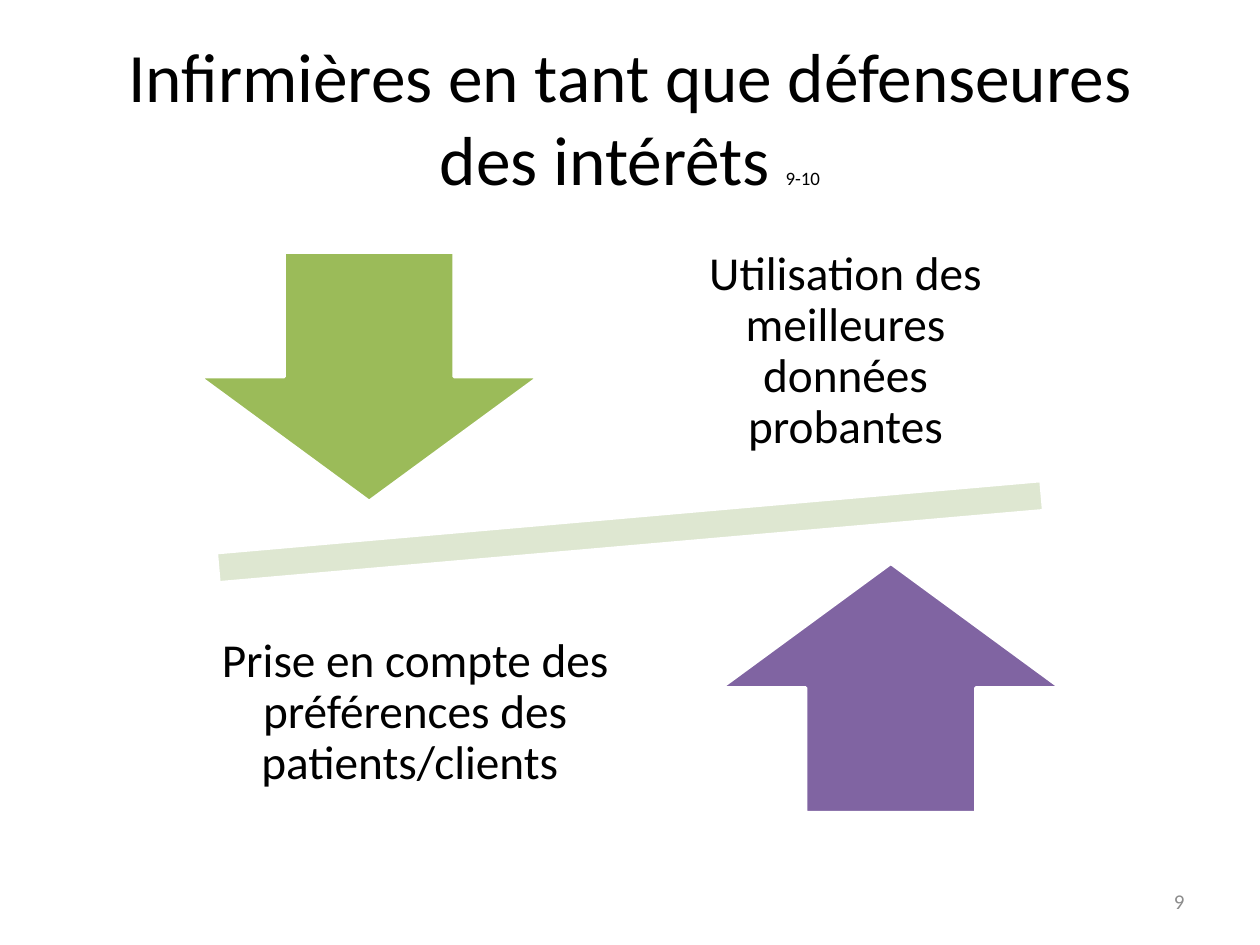
from pptx import Presentation
from pptx.dml.color import RGBColor
from pptx.enum.shapes import MSO_SHAPE as SHAPE
from pptx.enum.text import MSO_ANCHOR as ANCHOR, MSO_AUTO_SIZE as AUTO, PP_ALIGN as ALIGN
from pptx.util import Inches, Pt

# Content: boxes are left, top, width, height in inches
TITLE = [("Infirmières en tant que défenseures des intérêts ", 39.6), ("9-10", 10.8)]
TITLE_BOX = (0.5, 0.3, 9, 1.25)
BALANCE = [  # preset, box, fill, rotation
    (SHAPE.MATH_MINUS, (0.53, 3.71, 8.94, 1.02), "DEE7D1", 355),
    (SHAPE.DOWN_ARROW, (1.58, 2, 2.7, 1.98), "9BBB59", 0),
    (SHAPE.UP_ARROW, (5.72, 4.47, 2.7, 1.98), "8064A2", 0),
]
LABELS = [
    ("Utilisation des meilleures données probantes", (5.27, 1.75, 2.88, 2.08)),
    ("Prise en compte des préférences des patients/clients ", (1.46, 4.62, 3.67, 2.08)),
]
NUMBER, NUMBER_BOX = "9", (7.17, 6.95, 2.33, 0.4)


def rgb(value):
    return RGBColor.from_string(value)


def inches(box):
    return [Inches(v) for v in box]


def style(r, size, color="000000"):
    r.font.name = "Calibri"
    r.font.size = Pt(size)
    r.font.color.rgb = rgb(color)


def add_text(s, text, box, size, color, align):
    tf = s.shapes.add_textbox(*inches(box)).text_frame
    tf.word_wrap = True
    tf.vertical_anchor = ANCHOR.MIDDLE
    tf.text = text
    p = tf.paragraphs[0]
    p.alignment = align
    style(p.runs[0], size, color)
    return tf


prs = Presentation()
prs.slide_width, prs.slide_height = Inches(10), Inches(7.5)
s = prs.slides.add_slide(prs.slide_layouts[5])

# Title with its reference numbers
title = s.shapes.title
title.left, title.top, title.width, title.height = inches(TITLE_BOX)
tf = title.text_frame
tf.auto_size = AUTO.NONE
tf.vertical_anchor = ANCHOR.MIDDLE
p = tf.paragraphs[0]
p.alignment = ALIGN.CENTER
for text, size in TITLE:
    r = p.add_run()
    r.text = text
    style(r, size)

# Tilted bar and the two arrows
for preset, box, fill, rotation in BALANCE:
    sp = s.shapes.add_shape(preset, *inches(box))
    sp.rotation = rotation
    sp.shadow.inherit = False
    sp.fill.solid()
    sp.fill.fore_color.rgb = rgb(fill)
    sp.line.color.rgb = rgb("FFFFFF")
    sp.line.width = Pt(2)

# Labels opposite the arrows
for text, box in LABELS:
    tf = add_text(s, text, box, 27, "000000", ALIGN.CENTER)
    tf.margin_left = tf.margin_right = tf.margin_top = tf.margin_bottom = Inches(0.21)
    tf.paragraphs[0].line_spacing = 0.9

# Slide number
add_text(s, NUMBER, NUMBER_BOX, 12, "8C8C8C", ALIGN.RIGHT)

prs.save("out.pptx")
